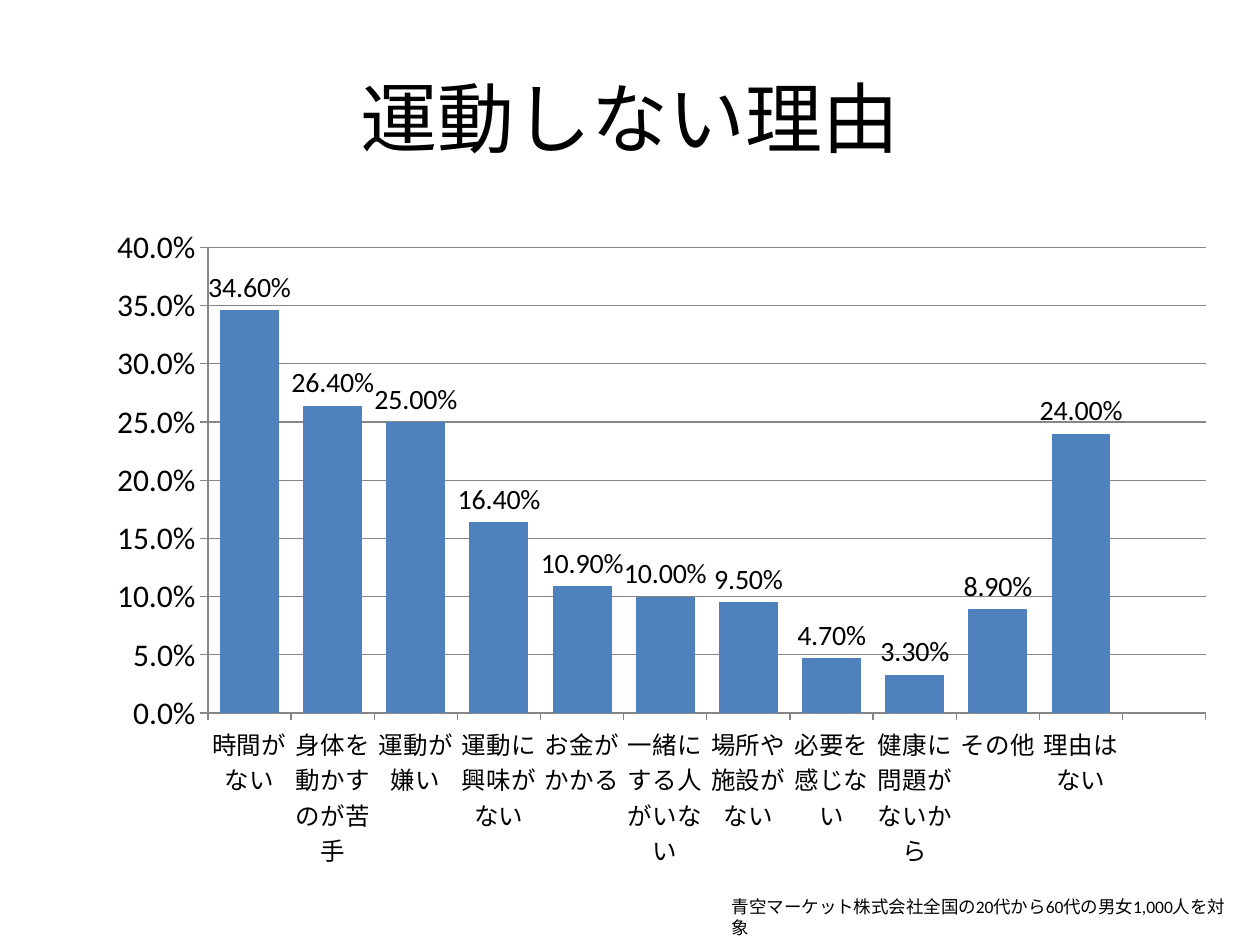
"""Build a slide with a column chart of the reasons people do not exercise."""
from pptx import Presentation
from pptx.chart.data import CategoryChartData
from pptx.dml.color import RGBColor
from pptx.enum.chart import XL_CHART_TYPE, XL_LABEL_POSITION, XL_TICK_MARK
from pptx.enum.text import MSO_ANCHOR, PP_ALIGN
from pptx.oxml import parse_xml
from pptx.util import Inches, Pt

COLUMN = XL_CHART_TYPE.COLUMN_CLUSTERED
OUTSIDE_END = XL_LABEL_POSITION.OUTSIDE_END
TICK_OUT = XL_TICK_MARK.OUTSIDE
MIDDLE = MSO_ANCHOR.MIDDLE
CENTER = PP_ALIGN.CENTER
BLACK = RGBColor(0x00, 0x00, 0x00)
BLUE = RGBColor(0x4F, 0x81, 0xBD)
GRAY = RGBColor(0x86, 0x86, 0x86)
FONT = "Calibri"
CHART_NS = "http://schemas.openxmlformats.org/drawingml/2006/chart"


def set_font(font, size):
    font.name = FONT
    font.size = Pt(size)
    font.color.rgb = BLACK


prs = Presentation()
prs.slide_width = Inches(10)
prs.slide_height = Inches(7.5)
slide = prs.slides.add_slide(prs.slide_layouts[5])

title = slide.shapes.title
title.left, title.top = Inches(0.5), Inches(0.3)
title.width, title.height = Inches(9), Inches(1.25)
title.text_frame.vertical_anchor = MIDDLE
heading = title.text_frame.paragraphs[0]
heading.alignment = CENTER
heading_run = heading.add_run()
heading_run.text = "運動しない理由"
set_font(heading_run.font, 44)

reasons = [
    ("時間がない", 0.346),
    ("身体を動かすのが苦手", 0.264),
    ("運動が嫌い", 0.25),
    ("運動に興味がない", 0.164),
    ("お金がかかる", 0.109),
    ("一緒にする人がいない", 0.1),
    ("場所や施設がない", 0.095),
    ("必要を感じない", 0.047),
    ("健康に問題がないから", 0.033),
    ("その他", 0.089),
    ("理由はない", 0.24),
    ("", None),
]
reason_data = CategoryChartData(number_format="0.00%")
reason_data.categories = [reason for reason, share in reasons]
reason_data.add_series("Series 1", [share for reason, share in reasons])
chart = slide.shapes.add_chart(
    COLUMN, Inches(0.75), Inches(1.7), Inches(9), Inches(5.28), reason_data
).chart
chart.has_legend = False
chart.has_title = False
set_font(chart.font, 18)

plot_area = chart.element.chart.plotArea
for layout in plot_area.findall(f"{{{CHART_NS}}}layout"):
    plot_area.remove(layout)
plot_area.insert(0, parse_xml(
    f'<c:layout xmlns:c="{CHART_NS}"><c:manualLayout>'
    '<c:layoutTarget val="inner"/><c:xMode val="edge"/><c:yMode val="edge"/>'
    '<c:x val="0.1"/><c:y val="0.05"/><c:w val="0.88"/><c:h val="0.7"/>'
    '</c:manualLayout></c:layout>'
))

plot = chart.plots[0]
plot.gap_width = 41
plot.vary_by_categories = False
bars = plot.series[0]
bars.format.fill.solid()
bars.format.fill.fore_color.rgb = BLUE
labels = bars.data_labels
labels.show_value = True
labels.number_format = "0.00%"
labels.number_format_is_linked = False
labels.position = OUTSIDE_END
set_font(labels.font, 16)

share_axis = chart.value_axis
reason_axis = chart.category_axis
share_axis.minimum_scale = 0
share_axis.maximum_scale = 0.4
share_axis.major_unit = 0.05
share_axis.has_major_gridlines = True
share_axis.tick_labels.number_format = "0.0%"
share_axis.tick_labels.number_format_is_linked = False
share_axis.major_gridlines.format.line.color.rgb = GRAY
for axis, size in ((share_axis, 18), (reason_axis, 14)):
    axis.major_tick_mark = TICK_OUT
    set_font(axis.tick_labels.font, size)
    axis.format.line.color.rgb = GRAY
reason_text = reason_axis._element.find(f"{{{CHART_NS}}}txPr")
reason_text.bodyPr.set("rot", "0")
reason_text.bodyPr.set("vert", "horz")

source_note = slide.shapes.add_textbox(
    Inches(5.71), Inches(7.06), Inches(4.18), Inches(0.27)
).text_frame
source_note.word_wrap = True
note_run = source_note.paragraphs[0].add_run()
note_run.text = "青空マーケット株式会社全国の20代から60代の男女1,000人を対象"
set_font(note_run.font, 10)

prs.save("out.pptx")
